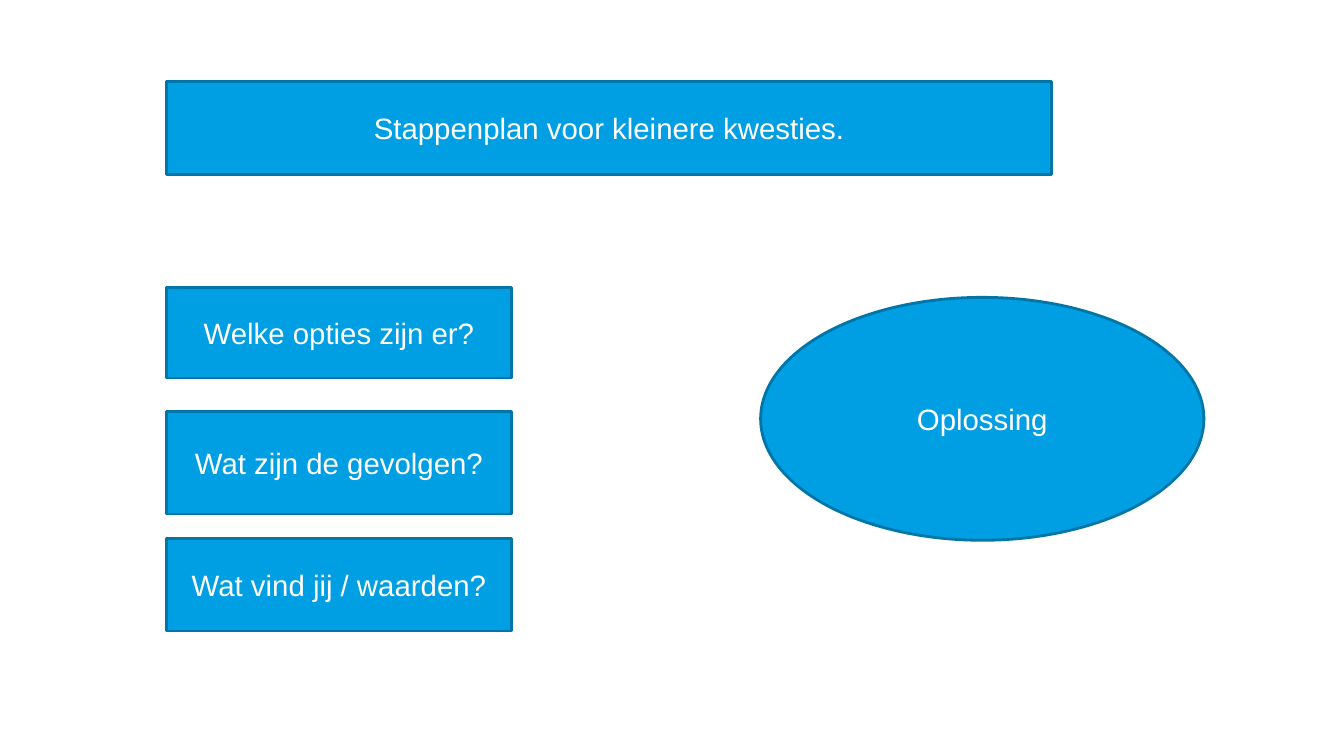
from pptx import Presentation
from pptx.dml.color import RGBColor
from pptx.enum.shapes import MSO_SHAPE as Shape
from pptx.enum.text import MSO_ANCHOR as Anchor, PP_ALIGN as Align
from pptx.util import Pt

# Content: text, top and height in px
TITLE = "Stappenplan voor kleinere kwesties."
STEPS = [
    ("Welke opties zijn er?", 285, 90),
    ("Wat zijn de gevolgen?", 408, 102),
    ("Wat vind jij / waarden?", 534, 92),
]
SOLUTION = "Oplossing"

# Layout and style
PX = 9144  # 100 px to the inch
LEFT = 165
STEP_WIDTH = 343
BLUE = RGBColor(0x00, 0x9F, 0xE3)
DARK_BLUE = RGBColor(0x00, 0x76, 0xA8)
WHITE = RGBColor(0xFF, 0xFF, 0xFF)


def add_block(slide, kind, text, left, top, width, height):
    block = slide.shapes.add_shape(
        kind, left * PX, top * PX, width * PX, height * PX)
    block.shadow.inherit = False
    block.fill.solid()
    block.fill.fore_color.rgb = BLUE
    block.line.color.rgb = DARK_BLUE
    block.line.width = Pt(2)
    frame = block.text_frame
    frame.word_wrap = True
    frame.vertical_anchor = Anchor.MIDDLE
    label = frame.paragraphs[0]
    label.text = text
    label.alignment = Align.CENTER
    label.font.name = "Arial"
    label.font.size = Pt(21)
    label.font.color.rgb = WHITE


def main():
    deck = Presentation()
    deck.slide_width, deck.slide_height = 1334 * PX, 750 * PX
    slide = deck.slides.add_slide(deck.slide_layouts[6])

    # Title bar
    add_block(slide, Shape.RECTANGLE, TITLE, LEFT, 81, 879, 92)

    # Steps on the left
    for text, top, height in STEPS:
        add_block(slide, Shape.RECTANGLE, text, LEFT, top, STEP_WIDTH, height)

    # Solution on the right
    add_block(slide, Shape.OVAL, SOLUTION, 755, 295, 440, 241)

    deck.save("out.pptx")


if __name__ == "__main__":
    main()
